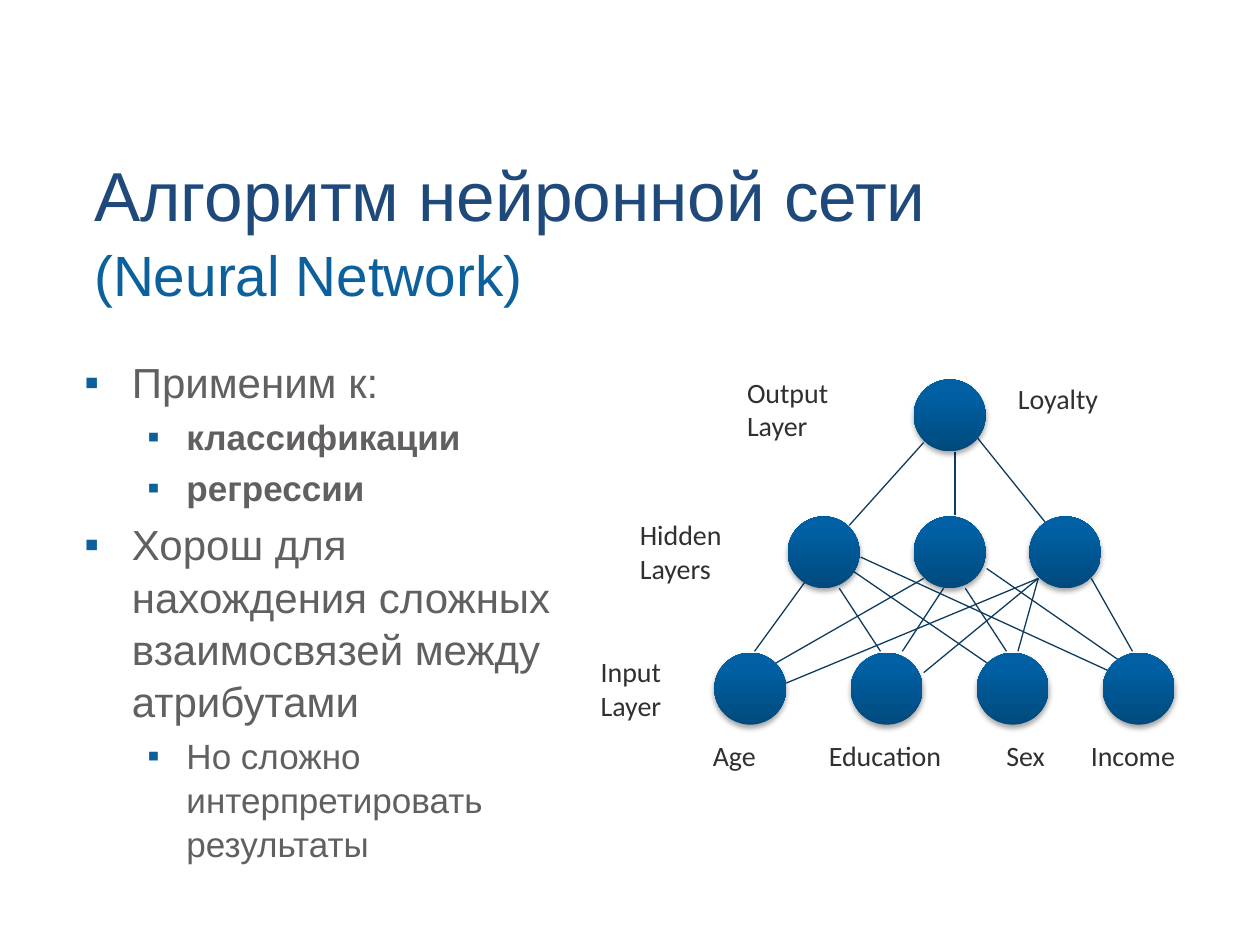
from copy import deepcopy
from dataclasses import dataclass

from lxml.etree import SubElement
from pptx import Presentation
from pptx.dml.color import RGBColor
from pptx.enum.shapes import MSO_CONNECTOR, MSO_SHAPE
from pptx.enum.text import MSO_ANCHOR, MSO_AUTO_SIZE
from pptx.oxml.ns import qn
from pptx.util import Cm, Pt


@dataclass(frozen=True)
class Theme:
    title: str = "1F497A"
    accent: str = "0C619C"
    body: str = "625F60"
    label: str = "312F30"
    edge: str = "0E3C60"
    node_stops: tuple = ((0, "004A7D"), (0.8, "0060A3"), (1, "0061A4"))
    title_size: float = 39.6
    subtitle_size: float = 32.4
    body_sizes: tuple = (24, 20)
    label_size: float = 16
    text_font: str = "Arial"
    label_font: str = "Calibri"


theme = Theme()


def add_text_box(left, top, width, height, **frame_format):
    tf = s.shapes.add_textbox(Cm(left), Cm(top), Cm(width), Cm(height)).text_frame
    for name, value in frame_format.items():
        setattr(tf, name, value)
    return tf


def add_run(p, text, color, **font_format):
    r = p.add_run()
    r.text = text
    for name, value in font_format.items():
        setattr(r.font, name, value)
    r.font.color.rgb = RGBColor.from_string(color)


prs = Presentation()
prs.slide_width, prs.slide_height = Cm(25.4), Cm(19.05)
s = prs.slides.add_slide(prs.slide_layouts[6])

plain_frame = dict(word_wrap=True, vertical_anchor=MSO_ANCHOR.TOP, margin_left=0,
                   margin_top=0, margin_right=0, margin_bottom=0)

# Bulleted text: level, bold, wording
bullets = [
    (0, False, "Применим к:"),
    (1, True, "классификации"),
    (1, True, "регрессии"),
    (0, False, "Хорош для нахождения сложных взаимосвязей между атрибутами"),
    (1, False, "Но сложно интерпретировать результаты"),
]
indents = [(0.96, -0.96), (2.06, -0.79)]
tf = add_text_box(1.7, 7.15, 10.16, 10.08, **plain_frame)
for i, (level, bold, text) in enumerate(bullets):
    p = tf.add_paragraph() if i else tf.paragraphs[0]
    size = theme.body_sizes[level]
    p.level = level
    p.line_spacing = 1.04
    p.space_before = Pt(0.2 * size if i else 0)
    pPr = p._p.get_or_add_pPr()
    for name, value in zip(("marL", "indent"), indents[level]):
        pPr.set(name, str(Cm(value)))
    SubElement(SubElement(pPr, qn("a:buClr")), qn("a:srgbClr"), val=theme.accent)
    SubElement(pPr, qn("a:buFont"), typeface=theme.text_font)
    SubElement(pPr, qn("a:buChar"), char="▪")
    add_run(p, text, theme.body, name=theme.text_font, size=Pt(size), bold=bold)

# Title
p = add_text_box(1.9, 2.97, 21.59, 1.9, **plain_frame).paragraphs[0]
p.line_spacing = 1.06
add_run(p, "Алгоритм нейронной сети", theme.title,
        name=theme.text_font, size=Pt(theme.title_size))
p.add_line_break()
add_run(p, "(Neural Network)", theme.accent,
        name=theme.text_font, size=Pt(theme.subtitle_size))

# Edges between layers: x1, y1, x2, y2
edges = [
    (15.21, 13.13, 16.28, 11.66), (17.12, 10.59, 18.62, 8.92),
    (17.75, 13.13, 16.92, 11.86), (21.29, 10.8, 19.69, 8.81),
    (22.83, 13.13, 22, 11.66), (20.29, 13.13, 19.46, 11.86),
    (19.89, 13.36, 17.12, 11.46), (20.52, 13.13, 20.93, 11.66),
    (15.65, 13.36, 18.62, 11.66), (15.85, 13.77, 20.93, 11.66),
    (18.19, 13.13, 19.02, 11.86), (18.62, 13.56, 20.93, 11.66),
    (22.43, 13.56, 17.35, 11.23), (22.63, 13.36, 19.89, 11.46),
    (19.25, 10.39, 19.25, 9.12),
]
for edge in edges:
    line = s.shapes.add_connector(MSO_CONNECTOR.STRAIGHT, *map(Cm, edge))
    line.line.color.rgb = RGBColor.from_string(theme.edge)
    line.line.width = Pt(0.75)
    SubElement(line._element.spPr, qn("a:effectLst"))

# Labels: left, top, width, height, wrap, paragraphs
labels = [
    (14.12, 14.76, 1.52, 0.94, False, ["Age"]),
    (16.46, 14.76, 3.05, 0.94, False, ["Education"]),
    (20.04, 14.76, 1.5, 0.94, False, ["Sex"]),
    (21.74, 14.76, 2.39, 0.94, False, ["Income"]),
    (11.86, 13.08, 2.34, 1.6, True, ["Input Layer"]),
    (12.65, 10.31, 2.46, 1.63, False, ["Hidden", "Layers"]),
    (14.81, 7.44, 3.25, 1.6, True, ["Output Layer"]),
    (20.27, 7.57, 2.31, 0.94, False, ["Loyalty"]),
]
for *box, wrap, lines in labels:
    tf = add_text_box(*box, word_wrap=wrap, auto_size=MSO_AUTO_SIZE.SHAPE_TO_FIT_TEXT)
    for i, text in enumerate(lines):
        p = tf.add_paragraph() if i else tf.paragraphs[0]
        add_run(p, text, theme.label, name=theme.label_font, size=Pt(theme.label_size))

# Neurons: top of each layer and the left edges in it
layers = [
    (7.65, [18.42]),
    (10.41, [15.88, 18.42, 20.75]),
    (13.16, [14.4, 17.15, 19.69, 22.23]),
]
shadow_format = dict(blurRad=Pt(3.1), dist=Pt(1.8), dir=90 * 60000, algn="ctr", rotWithShape=0)
for top, lefts in layers:
    for left in lefts:
        sp = s.shapes.add_shape(MSO_SHAPE.OVAL, Cm(left), Cm(top), Cm(1.45), Cm(1.45))
        sp.line.fill.background()
        sp.fill.gradient()
        sp.fill.gradient_angle = 90
        spPr = sp._element.spPr
        gsLst = spPr.find(qn("a:gradFill")).find(qn("a:gsLst"))
        gsLst.append(deepcopy(gsLst[-1]))
        for stop, (position, color) in zip(sp.fill.gradient_stops, theme.node_stops):
            stop.position = position
            stop.color.rgb = RGBColor.from_string(color)
        sp.shadow.inherit = False
        shadow = SubElement(spPr.find(qn("a:effectLst")), qn("a:outerShdw"))
        for name, value in shadow_format.items():
            shadow.set(name, str(value))
        black = SubElement(shadow, qn("a:srgbClr"), val="000000")
        SubElement(black, qn("a:alpha"), val="35000")

prs.save("out.pptx")
